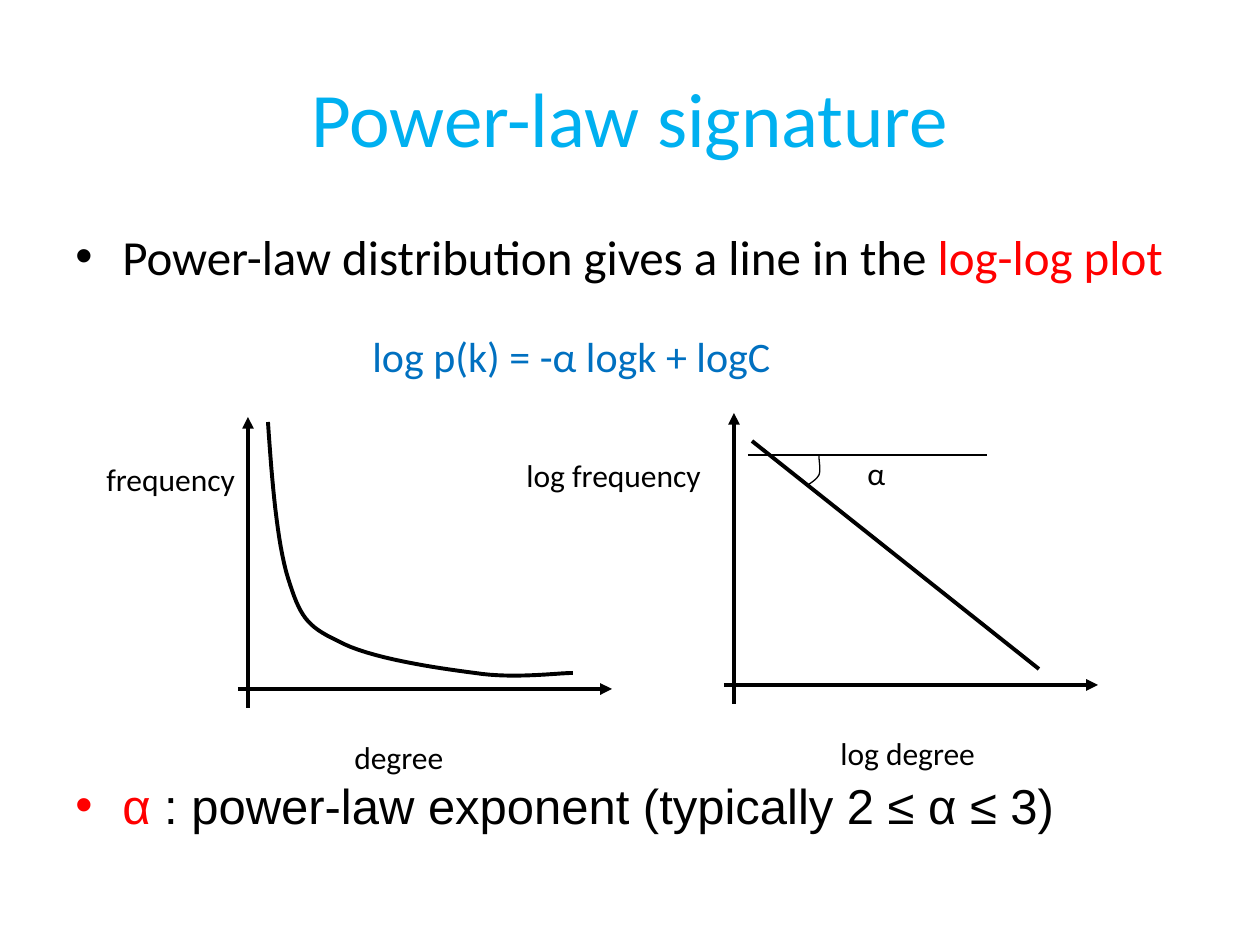
import pptx
import pptx.dml.color
import pptx.enum.shapes
import pptx.enum.text
import pptx.oxml
import pptx.oxml.ns
import pptx.util

PX = 914400 / 126
BLACK, RED, SKY, BLUE = "000000", "FF0000", "00B0F0", "0070C0"
THICK, THIN = 2.25, 0.75


def px(length):
    return pptx.util.Emu(round(length * PX))


def color(hex_code):
    return pptx.dml.color.RGBColor.from_string(hex_code)


def add_element(parent, tag, **attributes):
    element = pptx.oxml.parse_xml(f"<a:{tag} {pptx.oxml.ns.nsdecls('a')}/>")
    for key, value in attributes.items():
        element.set(key, str(value))
    parent.append(element)


def add_text(slide, box, runs, size, font="Calibri", wrap=False):
    """Write one paragraph of (text, colour) runs and return its frame."""
    frame = slide.shapes.add_textbox(*map(px, box)).text_frame
    frame.word_wrap = wrap
    paragraph = frame.paragraphs[0]
    paragraph.font.size = pptx.util.Pt(size)
    paragraph.font.name = font
    for text, hex_code in runs:
        run = paragraph.add_run()
        run.text = text
        run.font.color.rgb = color(hex_code)
    return frame


def add_title(slide, box, text):
    frame = add_text(slide, box, [(text, SKY)], 44, wrap=True)
    frame.vertical_anchor = pptx.enum.text.MSO_ANCHOR.MIDDLE
    frame.paragraphs[0].alignment = pptx.enum.text.PP_ALIGN.CENTER


def add_bullet(slide, box, runs, font):
    frame = add_text(slide, box, runs, 28, font, wrap=True)
    properties = frame.paragraphs[0]._p.get_or_add_pPr()
    indent = px(47)
    properties.set("marL", str(indent))
    properties.set("indent", str(-indent))
    bullet_parts = [("buFont", {"typeface": "Arial"}), ("buChar", {"char": "•"})]
    for position, (tag, attributes) in enumerate(bullet_parts):
        add_element(properties, tag, **attributes)
        properties.insert(position, properties[-1])


def add_line(slide, origin, start, end, width, arrow=False):
    left, top = origin
    line = slide.shapes.add_connector(
        pptx.enum.shapes.MSO_CONNECTOR.STRAIGHT,
        px(left + start[0]), px(top + start[1]),
        px(left + end[0]), px(top + end[1]))
    line.line.color.rgb = color(BLACK)
    line.line.width = pptx.util.Pt(width)
    if arrow:
        add_element(line.line._get_or_add_ln(), "tailEnd", type="triangle")
    add_element(line._element.spPr, "effectLst")


def bezier_points(start, segments, steps=16):
    """Yield points along a chain of cubic Bezier segments."""
    for first, second, end in segments:
        for step in range(1, steps + 1):
            t = step / steps
            weights = ((1 - t) ** 3, 3 * t * (1 - t) ** 2, 3 * t * t * (1 - t), t ** 3)
            corners = (start, first, second, end)
            yield tuple(sum(w * corner[axis] for w, corner in zip(weights, corners))
                        for axis in (0, 1))
        start = end


def add_curve(slide, origin, start, segments, width):
    def place(point):
        return tuple(px(base + offset) for base, offset in zip(origin, point))

    builder = slide.shapes.build_freeform(*place(start))
    builder.add_line_segments(
        [place(point) for point in bezier_points(start, segments)], close=False)
    curve = builder.convert_to_shape()
    curve.shadow.inherit = False
    curve.fill.background()
    curve.line.color.rgb = color(BLACK)
    curve.line.width = pptx.util.Pt(width)


def add_axes(slide, box, x_label, x_label_width, y_label, y_label_width):
    left, top, width, height = box
    origin = (left, top)
    add_line(slide, origin, (10, height), (10, 0), THICK, arrow=True)
    add_line(slide, origin, (0, height - 19), (width, height - 19), THICK, arrow=True)
    add_text(slide, (left + 104, top + height + 24, x_label_width, 50),
             [(x_label, BLACK)], 18)
    add_text(slide, (left + 20 - y_label_width, top + 37, y_label_width, 50),
             [(y_label, BLACK)], 18)


def add_degree_plot(slide, box):
    add_axes(slide, box, "degree", 124, "frequency", 164)
    decay = [((34, 64), (39, 125), (50, 161)),
             ((62, 199), (68, 209), (100, 224)),
             ((130, 241), (198, 251), (237, 256)),
             ((276, 262), (319, 256), (335, 256))]
    add_curve(slide, box[:2], (30, 5), decay, THICK)


def add_log_plot(slide, box):
    left, top = origin = box[:2]
    add_axes(slide, box, "log degree", 174, "log frequency", 230)
    add_line(slide, origin, (28, 28), (315, 256), THICK)
    add_line(slide, origin, (24, 42), (263, 42), THIN)
    angle = [((95, 49), (97, 57), (95, 62)), ((92, 67), (88, 69), (84, 72))]
    add_curve(slide, origin, (95, 42), angle, THIN)
    add_text(slide, (left + 131, top + 35, 44, 50), [("α", BLACK)], 18)


def main():
    deck = pptx.Presentation()
    deck.slide_width, deck.slide_height = px(1260), px(945)
    slide = deck.slides.add_slide(deck.slide_layouts[6])
    add_title(slide, (63, 38, 1134, 157), "Power-law signature")
    add_bullet(slide, (63, 220, 1134, 75),
               [("Power-law distribution gives a line in the ", BLACK),
                ("log-log plot", RED)], "Calibri")
    add_text(slide, (360, 324, 427, 63), [("log p(k) = -α logk + logC", BLUE)], 24)
    add_degree_plot(slide, (238, 417, 374, 291))
    add_log_plot(slide, (724, 413, 374, 291))
    add_bullet(slide, (63, 769, 1134, 75),
               [("α ", RED), (": power-law exponent (typically 2 ≤ α ≤ 3)", BLACK)],
               "Arial")
    deck.save("out.pptx")


if __name__ == "__main__":
    main()
